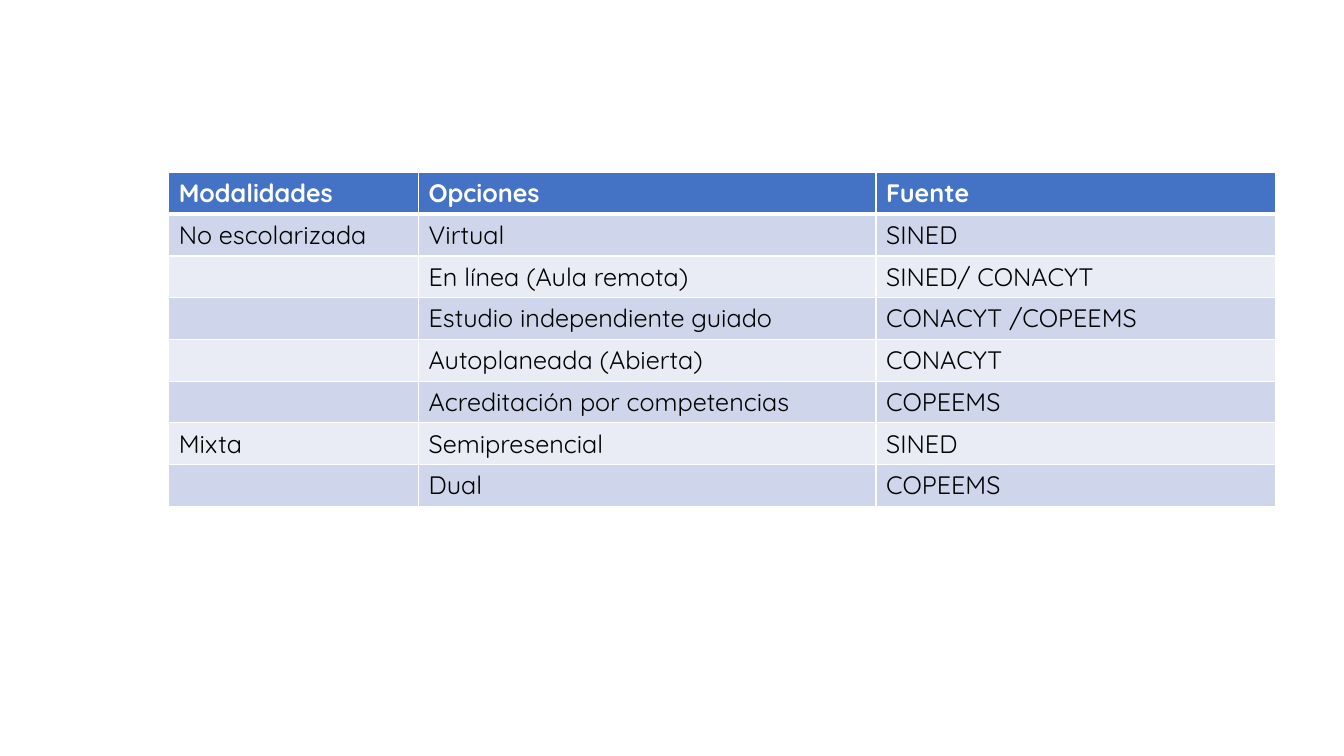
from dataclasses import dataclass

from lxml.etree import SubElement
from pptx import Presentation
from pptx.dml.color import RGBColor as RGB
from pptx.oxml.ns import qn
from pptx.util import Pt


@dataclass(frozen=True)
class Theme:
    font: str = "Quicksand"
    size: float = 18
    header: str = "4472C4"
    bands: tuple = ("CFD5EA", "E9EBF5")
    light: str = "FFFFFF"
    dark: str = "000000"
    thin: float = 1
    thick: float = 3


THEME = Theme()
COL_WIDTHS = (178.5, 326.8, 285.7)
ROW_HEIGHT = 29.2
ROWS = (
    ("Modalidades", "Opciones", "Fuente"),
    ("No escolarizada", "Virtual", "SINED"),
    ("", "En línea (Aula remota)", "SINED/ CONACYT"),
    ("", "Estudio independiente guiado", "CONACYT /COPEEMS"),
    ("", "Autoplaneada (Abierta)", "CONACYT"),
    ("", "Acreditación por competencias", "COPEEMS"),
    ("Mixta", "Semipresencial", "SINED"),
    ("", "Dual", "COPEEMS"),
)


def add_text(tf, text, color=THEME.dark, bold=False):
    p = tf.paragraphs[0]
    p.font.size = Pt(THEME.size)
    if text:
        r = p.add_run()
        r.text = text
        r.font.name = THEME.font
        r.font.size = Pt(THEME.size)
        r.font.bold = bold
        r.font.color.rgb = RGB.from_string(color)


def set_borders(cell, top, bottom):
    tc_pr = cell._tc.get_or_add_tcPr()
    widths = {"a:lnL": THEME.thin, "a:lnR": THEME.thin, "a:lnT": top, "a:lnB": bottom}
    for tag, width in widths.items():
        ln = SubElement(tc_pr, qn(tag), w=str(Pt(width)))
        fill = SubElement(ln, qn("a:solidFill"))
        SubElement(fill, qn("a:srgbClr"), val=THEME.light)


def add_modalities_table(slide, left, top):
    width, height = sum(COL_WIDTHS), ROW_HEIGHT * len(ROWS)
    table = slide.shapes.add_table(
        len(ROWS), len(COL_WIDTHS), Pt(left), Pt(top), Pt(width), Pt(height)
    ).table
    for column, col_width in zip(table.columns, COL_WIDTHS):
        column.width = Pt(col_width)
    for i, texts in enumerate(ROWS):
        is_header = i == 0
        table.rows[i].height = Pt(ROW_HEIGHT)
        fill = THEME.header if is_header else THEME.bands[(i - 1) % 2]
        for j, text in enumerate(texts):
            cell = table.cell(i, j)
            set_borders(
                cell,
                top=THEME.thick if i == 1 else THEME.thin,
                bottom=THEME.thick if is_header else THEME.thin,
            )
            cell.fill.solid()
            cell.fill.fore_color.rgb = RGB.from_string(fill)
            color = THEME.light if is_header else THEME.dark
            add_text(cell.text_frame, text, color=color, bold=is_header)


def main():
    prs = Presentation()
    prs.slide_width, prs.slide_height = Pt(960), Pt(540)
    slide = prs.slides.add_slide(prs.slide_layouts[6])
    add_modalities_table(slide, left=120.5, top=123.3)
    prs.save("out.pptx")


if __name__ == "__main__":
    main()
